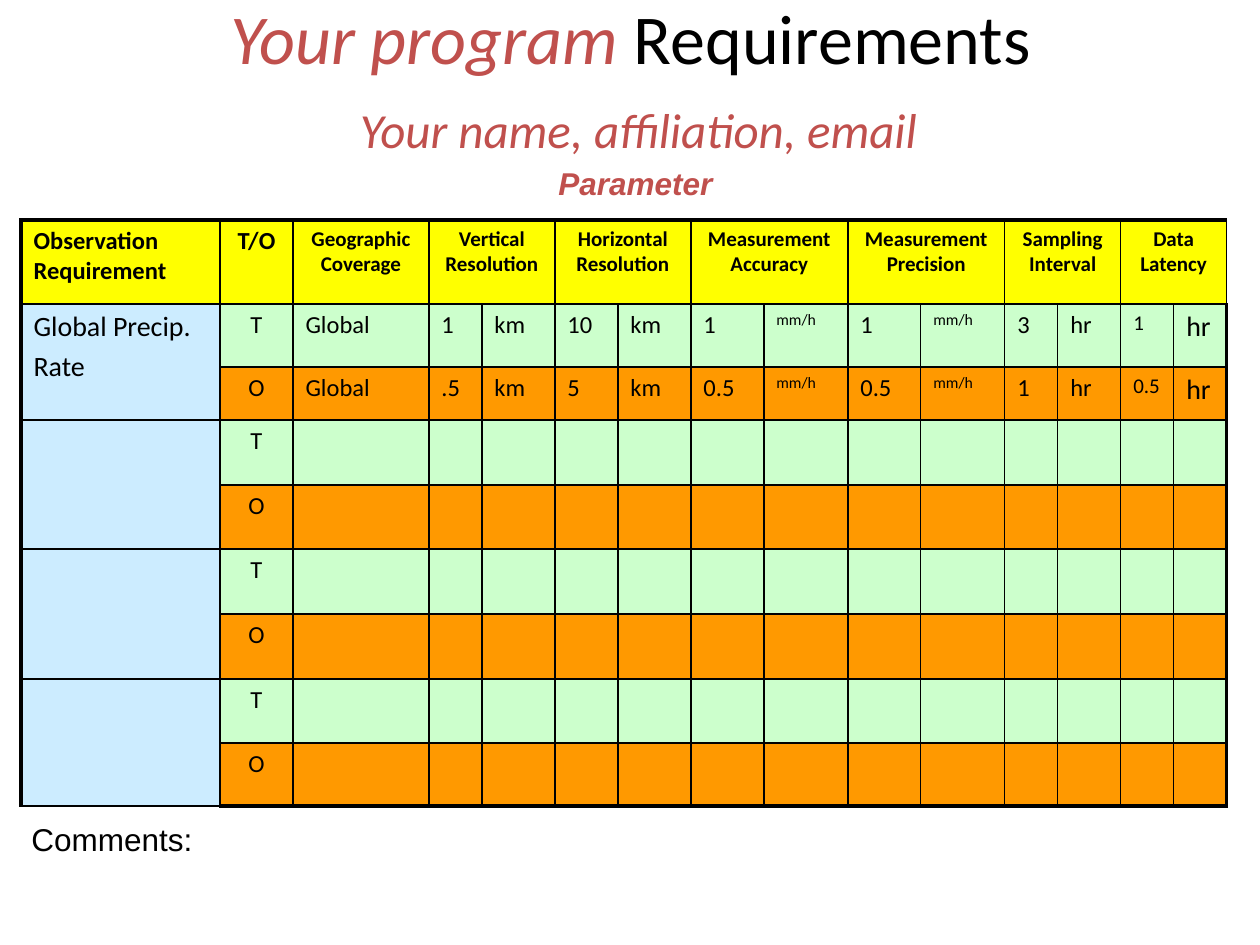
"""Build a slide with a table of observation requirements."""
from lxml import etree
from pptx import Presentation
from pptx.dml.color import RGBColor
from pptx.enum.text import MSO_ANCHOR, PP_ALIGN
from pptx.oxml.ns import qn
from pptx.util import Pt

LEFT, MID = PP_ALIGN.LEFT, PP_ALIGN.CENTER
TOP, CENTER = MSO_ANCHOR.TOP, MSO_ANCHOR.MIDDLE
EMU = 914400 / 126
HUES = {"red": "C0504D", "black": "000000", "head": "FFFF00",
        "name": "CCECFF", "T": "CCFFCC", "O": "FF9900"}

COLS = [199, 73, 136, 53, 73, 63, 73, 73, 84, 73, 84, 53, 63, 53, 53]
ROWS = [84, 63, 53, 65, 64, 65, 65, 64, 63]
HEADS = [("Observation Requirement", 1, 14), ("T/O", 1, 14),
         ("Geographic Coverage", 1, 12), ("Vertical Resolution", 2, 12),
         ("Horizontal Resolution", 2, 12), ("Measurement Accuracy", 2, 12),
         ("Measurement Precision", 2, 12), ("Sampling Interval", 2, 12),
         ("Data Latency", 2, 12)]
NAMES = [["Global Precip.", "Rate"], [], [], []]
DATA = [
    ["Global", "1", "km", "10", "km", "1", "mm/h", "1", "mm/h", "3", "hr", "1", "hr"],
    ["Global", ".5", "km", "5", "km", "0.5", "mm/h", "0.5", "mm/h", "1", "hr", "0.5", "hr"],
]
SIZES = [14] * 6 + [9, 14, 9, 14, 14, 12, 16]
TITLE = [("Your program", {"size": 40, "hue": "red", "italic": True}),
         (" Requirements\v ", {"size": 40}),
         ("Your name, affiliation, email", {"size": 28, "hue": "red", "italic": True})]


def px(n):
    return round(n * EMU)


def color(hue):
    return RGBColor.from_string(HUES[hue])


def write(para, text, size=14, face="Calibri", hue="black", bold=False,
          italic=False, align=LEFT, gap=0):
    para.alignment = align
    para.space_before = Pt(gap)
    for i, part in enumerate(text.split("\v")):
        if i:
            para.add_line_break()
            para._p.findall(qn("a:br"))[-1].get_or_add_rPr().set("sz", str(size * 100)) \
                if hasattr(para._p.findall(qn("a:br"))[-1], "get_or_add_rPr") else None
        run = para.add_run()
        run.text = part
        font = run.font
        font.size, font.name = Pt(size), face
        font.bold, font.italic = bold, italic
        font.color.rgb = color(hue)


def box(slide, x, y, w, h, anchor=TOP):
    frame = slide.shapes.add_textbox(px(x), px(y), px(w), px(h)).text_frame
    frame.word_wrap = True
    frame.vertical_anchor = anchor
    return frame.paragraphs[0]


def edge(cell, widths):
    props = cell._tc.get_or_add_tcPr()
    for i, (side, width) in enumerate(zip("LRTB", widths)):
        line = etree.Element(qn(f"a:ln{side}"), w=str(Pt(width)))
        fill = etree.SubElement(line, qn("a:solidFill"))
        etree.SubElement(fill, qn("a:srgbClr"), val=HUES["black"])
        props.insert(i, line)


def fill_in(cell, lines, **style):
    frame = cell.text_frame
    for i, text in enumerate(lines):
        para = frame.add_paragraph() if i else frame.paragraphs[0]
        write(para, text, gap=style["size"] / 5, **style)


def grid(slide):
    table = slide.shapes.add_table(len(ROWS), len(COLS), px(21), px(220),
                                   px(sum(COLS)), px(sum(ROWS))).table
    table.first_row = table.horz_banding = False
    for col, w in zip(table.columns, COLS):
        col.width = px(w)
    for row, h in zip(table.rows, ROWS):
        row.height = px(h)

    for r in range(len(ROWS)):
        for c in range(len(COLS)):
            cell = table.cell(r, c)
            hue = "head" if r == 0 else "name" if c == 0 else "OT"[r % 2]
            cell.fill.solid()
            cell.fill.fore_color.rgb = color(hue)
            outer = [c == 0, c == len(COLS) - 1, r == 0, r == len(ROWS) - 1]
            edge(cell, [2.25 if out else 1 for out in outer])
            if r and c == 1:
                fill_in(cell, [hue], size=14, align=MID)

    c = 0
    for text, span, size in HEADS:
        cell = table.cell(0, c)
        if span > 1:
            cell.merge(table.cell(0, c + span - 1))
        fill_in(cell, [text], size=size, bold=True, align=MID if c else LEFT)
        c += span
    for i, lines in enumerate(NAMES):
        cell = table.cell(2 * i + 1, 0)
        cell.merge(table.cell(2 * i + 2, 0))
        fill_in(cell, lines, size=16)
    for r, values in enumerate(DATA, 1):
        for c, (text, size) in enumerate(zip(values, SIZES), 2):
            fill_in(table.cell(r, c), [text], size=size)


def main():
    deck = Presentation()
    deck.slide_width, deck.slide_height = px(1260), px(945)
    slide = deck.slides.add_slide(deck.slide_layouts[6])
    title = box(slide, 95, 21, 1071, 116, CENTER)
    for text, style in TITLE:
        write(title, text, align=MID, **style)
    grid(slide)
    write(box(slide, 546, 158, 199, 50), "Parameter", size=18, face="Arial",
          hue="red", bold=True, italic=True)
    write(box(slide, 19, 814, 1210, 50), "Comments:", size=18, face="Arial")
    deck.save("out.pptx")


if __name__ == "__main__":
    main()
